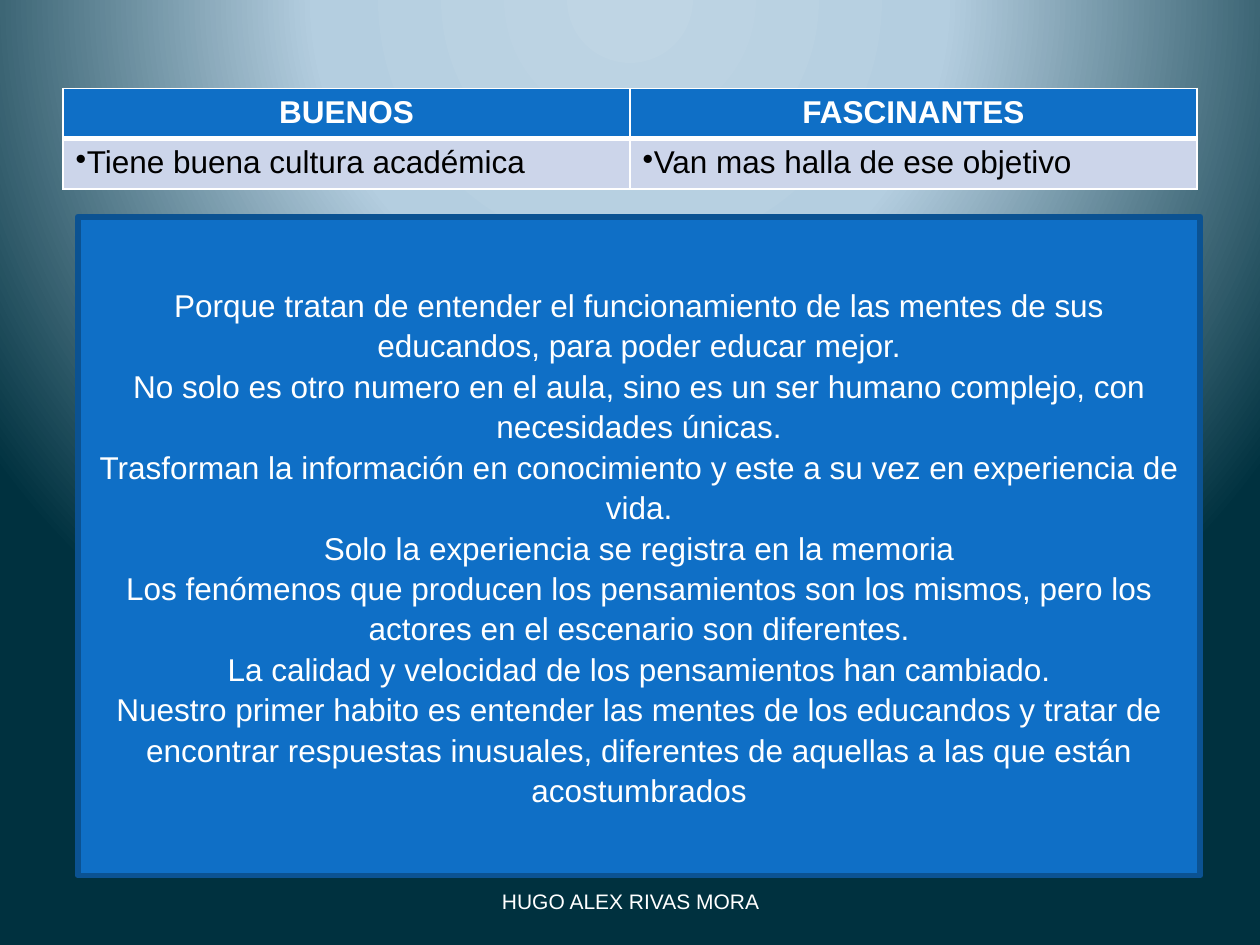
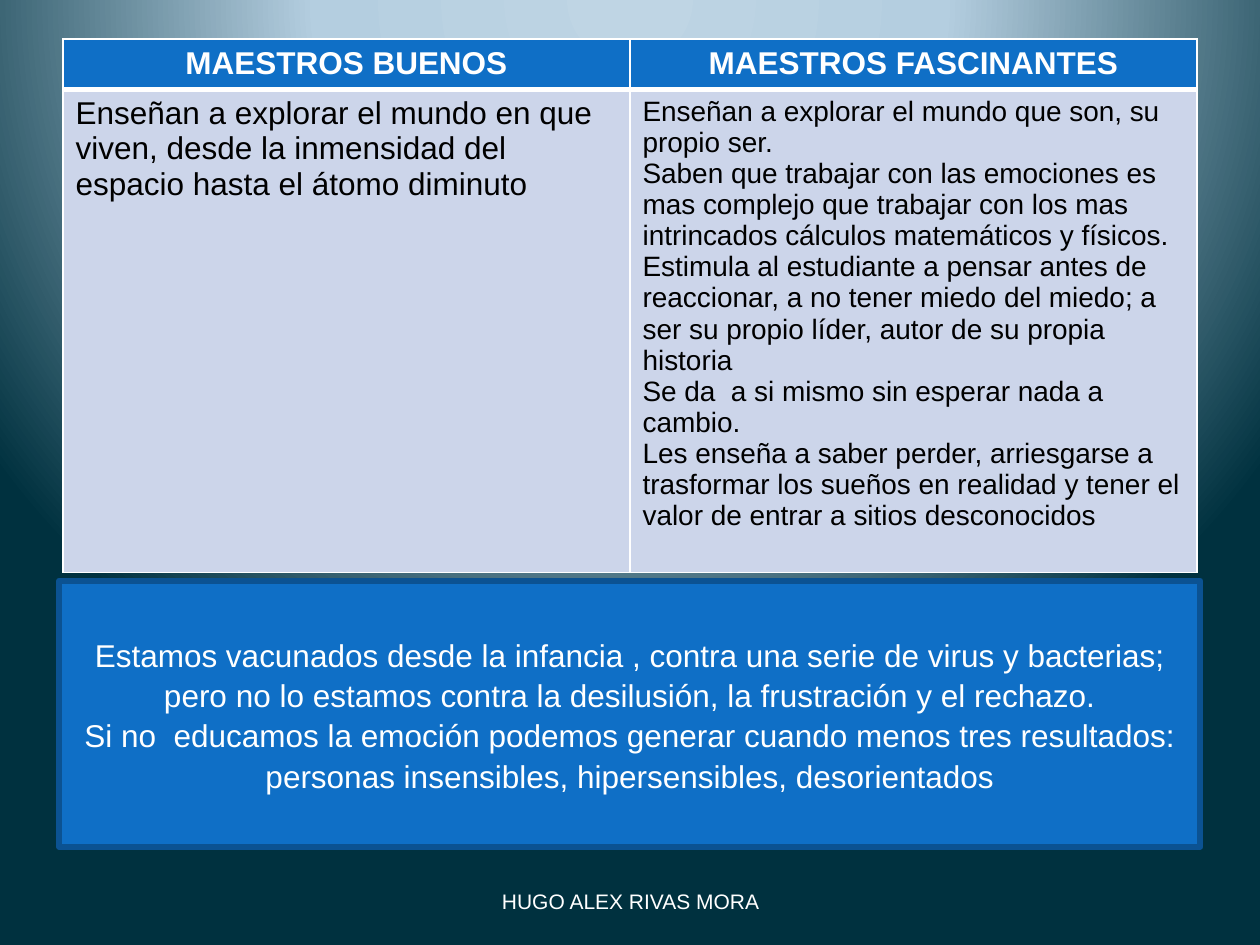
from dataclasses import dataclass

from pptx import Presentation, oxml
from pptx import util as u
from pptx.dml.color import RGBColor
from pptx.enum import shapes, text
from pptx.oxml import ns


@dataclass(frozen=True)
class Theme:
    font: str = "Arial"
    primary: str = "0F6FC6"
    outline: str = "0B5292"
    cell: str = "CCD5EA"
    light: str = "FFFFFF"
    dark: str = "000000"
    background: tuple = ((0, "BFD5E4"), (40, "B4CEE0"), (100, "00313F"))
    body_size: int = 18
    small_size: int = 16
    footer_size: int = 12
    outline_width: float = 3.35
    box_spacing: float = 1.07


FOOTER = "HUGO ALEX RIVAS MORA"
TABLE_LEFT, TABLE_WIDTH = 1.27, 22.86


class Deck:
    def __init__(self, theme):
        self.theme = theme
        self.presentation = Presentation()
        self.presentation.slide_width = u.Cm(25.4)
        self.presentation.slide_height = u.Cm(19.05)
        self.slide = None
        self.set_background()

    def set_background(self):
        """Give the master a radial gradient centred above the slide middle."""
        master = self.presentation.slide_master
        master.background.fill.gradient()
        stops = "".join(
            f'<a:gs pos="{position * 1000}"><a:srgbClr val="{color}"/></a:gs>'
            for position, color in self.theme.background)
        gradient = oxml.parse_xml(
            f'<a:gradFill {ns.nsdecls("a")} rotWithShape="1"><a:gsLst>{stops}</a:gsLst>'
            '<a:path path="circle"><a:fillToRect l="50000" t="-80000" r="50000" b="180000"/>'
            '</a:path></a:gradFill>')
        default = master.element.xpath("./p:cSld/p:bg//a:gradFill")[0]
        default.getparent().replace(default, gradient)

    def add_slide(self):
        self.slide = self.presentation.slides.add_slide(self.presentation.slide_layouts[6])
        self.add_footer()

    def set_text(self, frame, lines, size, color, bold=False, centered=True, spacing=None):
        frame.word_wrap = True
        frame.text = "\n".join(lines)
        for paragraph in frame.paragraphs:
            paragraph.alignment = text.PP_ALIGN.CENTER if centered else text.PP_ALIGN.LEFT
            paragraph.line_spacing = spacing
            for run in paragraph.runs:
                run.font.name = self.theme.font
                run.font.size = u.Pt(size)
                run.font.bold = bold
                run.font.color.rgb = RGBColor.from_string(color)

    def add_footer(self):
        box = self.slide.shapes.add_textbox(u.Cm(8.69), u.Cm(17.65), u.Cm(8.05), u.Cm(1.02))
        box.text_frame.vertical_anchor = text.MSO_ANCHOR.MIDDLE
        self.set_text(box.text_frame, [FOOTER], self.theme.footer_size, self.theme.light)

    def add_message(self, left, top, width, height, lines):
        theme = self.theme
        box = self.slide.shapes.add_shape(
            shapes.MSO_SHAPE.RECTANGLE, u.Cm(left), u.Cm(top), u.Cm(width), u.Cm(height))
        box.shadow.inherit = False
        box.fill.solid()
        box.fill.fore_color.rgb = RGBColor.from_string(theme.primary)
        box.line.color.rgb = RGBColor.from_string(theme.outline)
        box.line.width = u.Pt(theme.outline_width)
        outline = box.element.xpath("./p:spPr/a:ln")[0]
        outline.append(oxml.parse_xml(f'<a:round {ns.nsdecls("a")}/>'))
        box.text_frame.vertical_anchor = text.MSO_ANCHOR.MIDDLE
        self.set_text(box.text_frame, lines, theme.body_size, theme.light,
                      spacing=theme.box_spacing)

    def style_cell(self, cell, fill, top_width, bottom_width):
        properties = cell._tc.get_or_add_tcPr()
        for side, width in zip("LRTB", (1, 1, top_width, bottom_width)):
            properties.append(oxml.parse_xml(
                f'<a:ln{side} {ns.nsdecls("a")} w="{u.Pt(width)}"><a:solidFill>'
                f'<a:srgbClr val="{self.theme.light}"/></a:solidFill></a:ln{side}>'))
        cell.fill.solid()
        cell.fill.fore_color.rgb = RGBColor.from_string(fill)

    def add_comparison(self, top, heights, headings, bodies, sizes, bulleted=False):
        """Add a two-column table: a heading row over a row of paragraphs."""
        theme = self.theme
        table = self.slide.shapes.add_table(
            2, 2, u.Cm(TABLE_LEFT), u.Cm(top), u.Cm(TABLE_WIDTH), u.Cm(sum(heights))).table
        for row, height in zip(table.rows, heights):
            row.height = u.Cm(height)
        for column, (heading, lines, size) in enumerate(zip(headings, bodies, sizes)):
            header, body = table.cell(0, column), table.cell(1, column)
            self.style_cell(header, theme.primary, 1, 3)
            self.style_cell(body, theme.cell, 3, 1)
            self.set_text(header.text_frame, [heading], theme.body_size, theme.light, bold=True)
            self.set_text(body.text_frame, lines, size, theme.dark, centered=False)
            if bulleted:
                for paragraph in body.text_frame.paragraphs:
                    paragraph._p.get_or_add_pPr().append(
                        oxml.parse_xml(f'<a:buChar {ns.nsdecls("a")} char="•"/>'))


def build_culture_slide(deck):
    size = deck.theme.body_size
    deck.add_slide()
    deck.add_comparison(
        1.78, (0.97, 0.97), ("BUENOS", "FASCINANTES"),
        (["Tiene buena cultura académica"], ["Van mas halla de ese objetivo"]),
        (size, size), bulleted=True)
    deck.add_message(1.57, 4.37, 22.63, 13.28, [
        "Porque tratan de entender el funcionamiento de las mentes de sus educandos, "
        "para poder educar mejor.",
        "No solo es otro numero en el aula, sino es un ser humano complejo, "
        "con necesidades únicas.",
        "Trasforman la información en conocimiento y este a su vez en experiencia de vida.",
        "Solo la experiencia se registra en la memoria",
        "Los fenómenos que producen los pensamientos son los mismos, "
        "pero los actores en el escenario son diferentes.",
        "La calidad y velocidad de los pensamientos han cambiado.",
        "Nuestro primer habito es entender las mentes de los educandos y tratar de encontrar "
        "respuestas inusuales, diferentes de aquellas a las que están acostumbrados",
    ])


def build_emotions_slide(deck):
    deck.add_slide()
    deck.add_comparison(
        0.79, (1.02, 9.02), ("MAESTROS BUENOS", "MAESTROS FASCINANTES"),
        (["Enseñan a explorar el mundo en que viven, desde la inmensidad del espacio "
          "hasta el átomo diminuto"],
         ["Enseñan a explorar el mundo que son, su propio ser.",
          "Saben que trabajar con las emociones es mas complejo que trabajar con los mas "
          "intrincados cálculos matemáticos y físicos.",
          "Estimula al estudiante a pensar antes de reaccionar, a no tener miedo del miedo; "
          "a ser su propio líder, autor de su propia historia",
          "Se da  a si mismo sin esperar nada a cambio.",
          "Les enseña a saber perder, arriesgarse a trasformar los sueños en realidad y "
          "tener el valor de entrar a sitios desconocidos"]),
        (deck.theme.body_size, deck.theme.small_size))
    deck.add_message(1.19, 11.71, 23.01, 5.36, [
        "Estamos vacunados desde la infancia , contra una serie de virus y bacterias; "
        "pero no lo estamos contra la desilusión, la frustración y el rechazo.",
        "Si no  educamos la emoción podemos generar cuando menos tres resultados: "
        "personas insensibles, hipersensibles, desorientados",
    ])


def main():
    deck = Deck(Theme())
    build_culture_slide(deck)
    build_emotions_slide(deck)
    deck.presentation.save("out.pptx")


if __name__ == "__main__":
    main()
